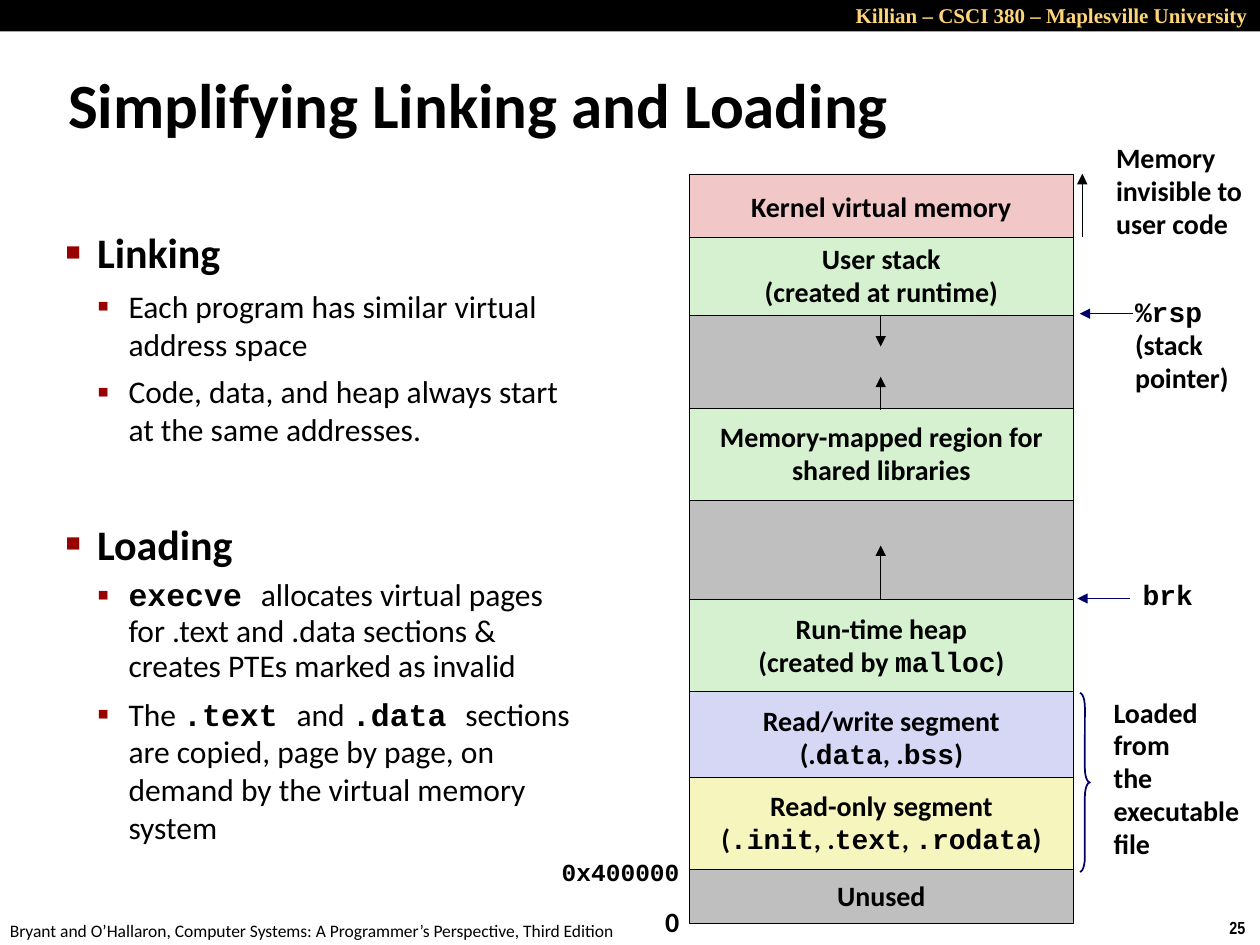
from lxml.etree import SubElement
from pptx import Presentation
from pptx.dml.color import RGBColor
from pptx.enum.shapes import MSO_CONNECTOR, MSO_SHAPE
from pptx.enum.text import MSO_ANCHOR, MSO_AUTO_SIZE, PP_ALIGN
from pptx.oxml.ns import qn
from pptx.util import Inches, Pt

BLACK = RGBColor(0x00, 0x00, 0x00)
GOLD = RGBColor(0xFF, 0xD5, 0x79)
RED = RGBColor(0x99, 0x00, 0x00)
NAVY = RGBColor(0x00, 0x00, 0x66)
PINK = RGBColor(0xF1, 0xC7, 0xC7)
GREEN = RGBColor(0xD5, 0xF1, 0xCF)
GRAY = RGBColor(0xBF, 0xBF, 0xBF)
LILAC = RGBColor(0xD6, 0xD6, 0xF5)
YELLOW = RGBColor(0xF6, 0xF5, 0xBD)


def add_runs(p, text, size, bold=True, font="Calibri", color=BLACK):
    for i, part in enumerate(text.split("`")):
        if not part:
            continue
        code = i % 2 == 1
        r = p.add_run()
        r.text = part
        r.font.name = "Courier New" if code else font
        r.font.size = Pt(size)
        r.font.bold = bold or code
        r.font.color.rgb = color


def add_lines(tf, lines, size=16, align=PP_ALIGN.LEFT, spacing=0.98, **style):
    for i, line in enumerate(lines):
        p = tf.paragraphs[0] if i == 0 else tf.add_paragraph()
        p.alignment = align
        p.line_spacing = 0.94 if line.startswith("`") else spacing
        add_runs(p, line, size, **style)


prs = Presentation()
prs.slide_width, prs.slide_height = Inches(10), Inches(7.5)
s = prs.slides.add_slide(prs.slide_layouts[1])
title, body = s.placeholders[0], s.placeholders[1]

bar = s.shapes.add_shape(MSO_SHAPE.RECTANGLE, 0, 0, Inches(10), Inches(0.25))
bar.shadow.inherit = False
bar.fill.solid()
bar.fill.fore_color.rgb = BLACK
bar.line.fill.background()

furniture = [
    (9.66, 7.23, 0.34, 0.27, "25", PP_ALIGN.LEFT,
     dict(size=10, font="Arial Narrow")),
    (-0.02, 7.25, 5.08, 0.27,
     "Bryant and O’Hallaron, Computer Systems: A Programmer’s Perspective, Third Edition",
     PP_ALIGN.LEFT, dict(size=10, bold=False)),
    (6.69, -0.03, 3.31, 0.3, "Killian – CSCI 380 – Maplesville University",
     PP_ALIGN.RIGHT, dict(size=12, font="Times New Roman", color=GOLD)),
]
for x, y, w, h, text, align, style in furniture:
    sp = s.shapes.add_textbox(Inches(x), Inches(y), Inches(w), Inches(h))
    sp.text_frame.word_wrap = align == PP_ALIGN.RIGHT
    add_lines(sp.text_frame, [text], align=align, spacing=1.0, **style)

title.left, title.top = Inches(0.44), Inches(0.39)
title.width, title.height = Inches(9.06), Inches(0.86)
title.text_frame.auto_size = MSO_AUTO_SIZE.NONE
title.text_frame.vertical_anchor = MSO_ANCHOR.MIDDLE
add_lines(title.text_frame, ["Simplifying Linking and Loading"], 36, spacing=1.0)

body.left, body.top = Inches(0.42), Inches(1.75)
body.width, body.height = Inches(4.33), Inches(5.23)
tf = body.text_frame
tf.auto_size = MSO_AUTO_SIZE.NONE
outline = [
    (0, 12.5, 1.0, "Linking"),
    (1, 5.6, 1.0, "Each program has similar virtual address space"),
    (1, 5.6, 1.0, "Code, data, and heap always start at the same addresses."),
    (0, 40, 1.0, "Loading"),
    (1, 5.6, 0.94, "`execve `allocates virtual pages for .text and .data sections "
     "& creates PTEs marked as invalid"),
    (1, 5.6, 1.0, "The `.text `and `.data `sections are copied, page by page, "
     "on demand by the virtual memory system"),
]
for i, (level, before, spacing, text) in enumerate(outline):
    p = tf.paragraphs[0] if i == 0 else tf.add_paragraph()
    p.level = level
    p.space_before = Pt(before)
    p.line_spacing = spacing
    add_runs(p, text, 18 if level else 24, bold=level == 0)
    pPr = p._p.get_or_add_pPr()
    pPr.set("marL", str(Inches(0.25 * (level + 1))))
    pPr.set("indent", str(Inches(-0.25)))
    SubElement(SubElement(pPr, qn("a:buClr")), qn("a:srgbClr"), val=str(RED))
    SubElement(pPr, qn("a:buSzPct"), val="110000" if level else "60000")
    SubElement(pPr, qn("a:buFont"), typeface="Arial")
    SubElement(pPr, qn("a:buChar"), char="▪" if level else "■")

regions = [
    (1.38, 0.53, PINK, ["Kernel virtual memory"]),
    (2.25, 0.99, GRAY, []),
    (1.88, 0.62, GREEN, ["User stack", "(created at runtime)"]),
    (3.24, 0.73, GREEN, ["Memory-mapped region for", "shared libraries"]),
    (3.97, 0.79, GRAY, []),
    (4.76, 0.73, GREEN, ["Run-time heap", "(created by `malloc`)"]),
    (5.49, 0.73, LILAC, ["Read/write segment", "(.`data`, .`bss`)"]),
    (6.17, 0.73, YELLOW, ["Read-only segment", "(`.init`, .`text`, `.rodata`)"]),
    (6.9, 0.43, GRAY, ["Unused"]),
]
for y, h, color, lines in regions:
    sp = s.shapes.add_shape(MSO_SHAPE.RECTANGLE, Inches(5.47), Inches(y),
                            Inches(3.05), Inches(h))
    sp.shadow.inherit = False
    sp.fill.solid()
    sp.fill.fore_color.rgb = color
    sp.line.color.rgb = BLACK
    sp.line.width = Pt(0.25)
    sp.text_frame.word_wrap = False
    sp.text_frame.vertical_anchor = MSO_ANCHOR.MIDDLE
    add_lines(sp.text_frame, lines, align=PP_ALIGN.CENTER)

arrows = [
    (6.99, 4.75, 6.99, 4.33, BLACK),
    (6.99, 3.25, 6.99, 2.99, BLACK),
    (6.99, 2.5, 6.99, 2.75, BLACK),
    (8.59, 1.88, 8.59, 1.38, BLACK),
    (8.99, 2.49, 8.57, 2.49, NAVY),
    (8.97, 4.75, 8.55, 4.75, NAVY),
]
for x1, y1, x2, y2, color in arrows:
    c = s.shapes.add_connector(MSO_CONNECTOR.STRAIGHT, Inches(x1), Inches(y1),
                               Inches(x2), Inches(y2))
    c.line.color.rgb = color
    c.line.width = Pt(0.25)
    spPr = c.element.spPr
    SubElement(spPr.find(qn("a:ln")), qn("a:tailEnd"), type="triangle")
    SubElement(spPr, qn("a:effectLst"))

brace = s.shapes.add_shape(MSO_SHAPE.RIGHT_BRACE, Inches(8.57), Inches(5.5),
                           Inches(0.08), Inches(1.42))
brace.shadow.inherit = False
brace.adjustments[0] = 1.42
brace.fill.background()
brace.line.color.rgb = NAVY
brace.line.width = Pt(1)

labels = [
    (5.18, 7.14, 0.31, 0.37, 16, ["0"]),
    (4.36, 6.77, 1.14, 0.33, 14, ["`0x400000`"]),
    (8.76, 1.08, 1.26, 0.89, 16, ["Memory", "invisible to", "user code"]),
    (8.91, 2.31, 0.95, 0.88, 16, ["`%rsp`", "(stack", "pointer)"]),
    (8.97, 4.56, 0.6, 0.36, 16, ["`brk`"]),
    (8.74, 5.48, 1.26, 1.42, 16, ["Loaded", "from", "the", "executable", "file"]),
]
for x, y, w, h, size, lines in labels:
    sp = s.shapes.add_textbox(Inches(x), Inches(y), Inches(w), Inches(h))
    sp.text_frame.word_wrap = False
    sp.text_frame.auto_size = MSO_AUTO_SIZE.SHAPE_TO_FIT_TEXT
    add_lines(sp.text_frame, lines, size)

prs.save("out.pptx")
